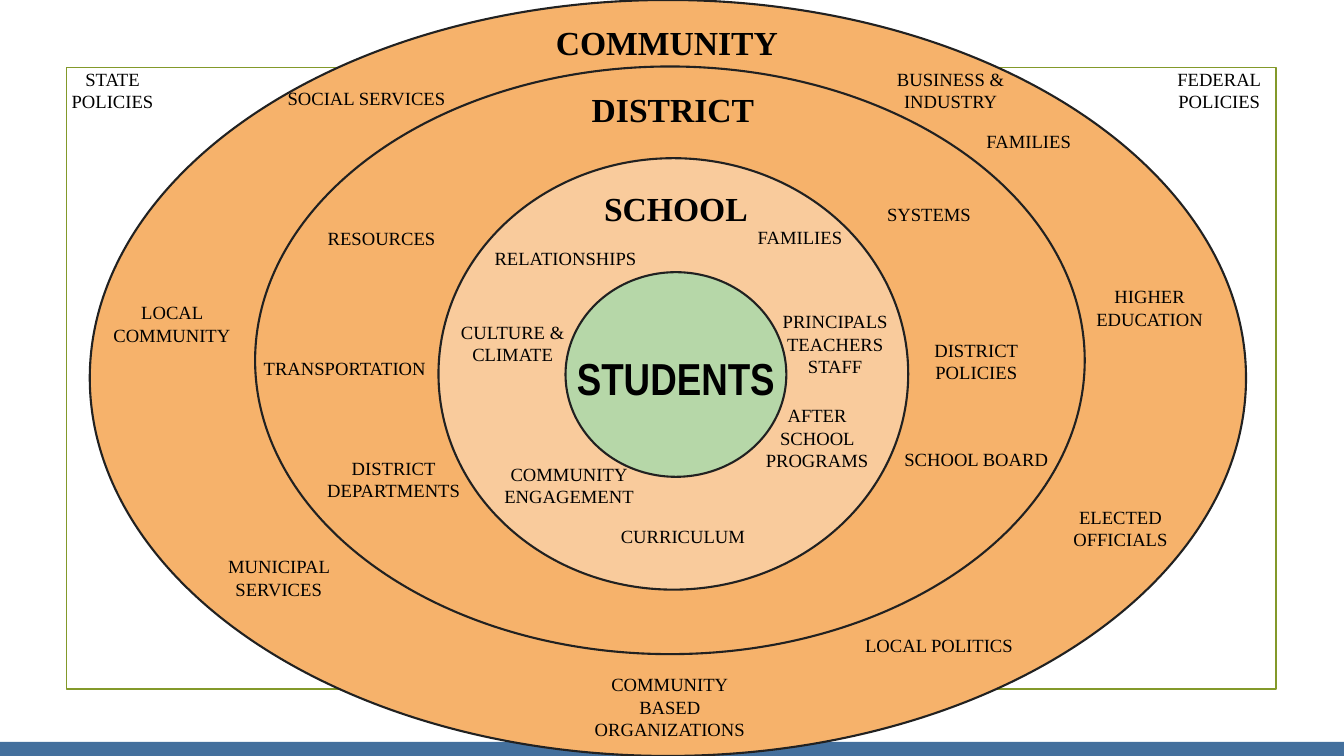
from pptx import Presentation
from pptx import util as u
from pptx.dml.color import RGBColor
from pptx.enum import shapes, text

WHITE = RGBColor(0xFF, 0xFF, 0xFF)
BLACK = RGBColor(0x00, 0x00, 0x00)
OUTLINE = RGBColor(0x21, 0x21, 0x21)
OLIVE = RGBColor(0x83, 0x99, 0x2A)
BLUE = RGBColor(0x44, 0x70, 0x9D)
ORANGE = RGBColor(0xF6, 0xB2, 0x6B)
PEACH = RGBColor(0xF9, 0xCB, 0x9C)
GREEN = RGBColor(0xB6, 0xD7, 0xA8)

SLIDE_WIDTH, SLIDE_HEIGHT = u.Inches(13.333), u.Inches(7.5)
LABEL_SIZE = (15.08, 11.6)
INSET = u.Inches(0.13)

LABEL = {"name": "Times New Roman", "size": u.Pt(13.3), "bold": False}
HEADING = {"name": "Times New Roman", "size": u.Pt(24), "bold": True}
CENTRE = {"name": "Arial Narrow", "size": u.Pt(32), "bold": True}

FILLED_RINGS = [
    ((6.68, 0, 86.03, 100), ORANGE),
    ((32.63, 20.93, 34.95, 57.07), PEACH),
    ((42.08, 36, 16.43, 27.07), GREEN),
]
DISTRICT_RING = (18.98, 8.8, 61.73, 77.73)

SCHOOL_LABELS = [
    ("CURRICULUM", 44.33, 68, 12.98, 6),
    ("COMMUNITY\nENGAGEMENT", 35.33, 59.47, 14.03, 11.2),
    ("RELATIONSHIPS", 34.88, 31.2, 14.4, 6),
    ("AFTER SCHOOL PROGRAMS", 55.13, 51.73, 11.33, 6),
    ("CULTURE & CLIMATE", 32.48, 40.67, 11.33, 9.73),
    ("FAMILIES", 51.98, 28.4),
    ("PRINCIPALS\nTEACHERS\nSTAFF", 54.6, 39.33),
]
DISTRICT_LABELS = [
    ("DISTRICT\nPOLICIES", 65.1, 43.07),
    ("TRANSPORTATION", 17.85, 45.73, 15.6, 11.6),
    ("SCHOOL BOARD", 65.1, 57.73),
    ("RESOURCES", 20.85, 28.53),
    ("SYSTEMS", 61.58, 25.33),
    ("DISTRICT\nDEPARTMENTS", 21.75, 58.67),
]
COMMUNITY_LABELS = [
    ("BUSINESS &\nINDUSTRY", 54.08, 7.2, 33.3, 7.47),
    ("COMMUNITY\nBASED\nORGANIZATIONS", 42.3, 87.33),
    ("LOCAL COMMUNITY", 5.25, 38.13),
    ("HIGHER EDUCATION", 78, 36),
    ("LOCAL POLITICS", 62.33, 82.4),
    ("SOCIAL SERVICES", 19.73, 10),
    ("FAMILIES", 69, 15.73),
    ("MUNICIPAL SERVICES", 13.2, 71.73),
    ("ELECTED OFFICIALS", 75.83, 65.2),
]
OUTER_LABELS = [
    ("FEDERAL\nPOLICIES", 83.18, 7.2),
    ("STATE\nPOLICIES", 0.83, 7.2),
]
HEADINGS = [
    ("DISTRICT", 42.53, 10),
    ("SCHOOL", 42.75, 23.07),
    ("COMMUNITY", 39.45, 1.2, 20.33, 9.07),
]


def place(left, top, width, height):
    return (
        int(SLIDE_WIDTH * left / 100),
        int(SLIDE_HEIGHT * top / 100),
        int(SLIDE_WIDTH * width / 100),
        int(SLIDE_HEIGHT * height / 100),
    )


def add_figure(slide, kind, box, fill=None, line=None, weight=1.5):
    shape = slide.shapes.add_shape(kind, *place(*box))
    shape.shadow.inherit = False
    if fill is None:
        shape.fill.background()
    else:
        shape.fill.solid()
        shape.fill.fore_color.rgb = fill
    if line is None:
        shape.line.fill.background()
    else:
        shape.line.color.rgb = line
        shape.line.width = u.Pt(weight)


def add_label(slide, wording, left, top, *size, style=LABEL, anchor=text.MSO_ANCHOR.TOP):
    box = place(left, top, *(size or LABEL_SIZE))
    frame = slide.shapes.add_textbox(*box).text_frame
    frame_format = {
        "word_wrap": True,
        "vertical_anchor": anchor,
        **{f"margin_{side}": INSET for side in ("left", "top", "right", "bottom")},
    }
    for attribute, value in frame_format.items():
        setattr(frame, attribute, value)
    frame.text = wording
    for paragraph in frame.paragraphs:
        paragraph.alignment = text.PP_ALIGN.CENTER
        for run in paragraph.runs:
            for attribute, value in style.items():
                setattr(run.font, attribute, value)
            run.font.color.rgb = BLACK


def main():
    presentation = Presentation()
    presentation.slide_width, presentation.slide_height = SLIDE_WIDTH, SLIDE_HEIGHT
    slide = presentation.slides.add_slide(presentation.slide_layouts[6])
    slide.background.fill.solid()
    slide.background.fill.fore_color.rgb = WHITE

    rectangle, oval = shapes.MSO_SHAPE.RECTANGLE, shapes.MSO_SHAPE.OVAL
    add_figure(slide, rectangle, (4.95, 8.93, 90, 82.27), line=OLIVE, weight=1.25)
    add_figure(slide, rectangle, (0, 98.13, 100, 1.87), fill=BLUE)
    for box, fill in FILLED_RINGS:
        add_figure(slide, oval, box, fill, OUTLINE)

    add_label(slide, "STUDENTS", 41.63, 42.93, 17.33, 14,
              style=CENTRE, anchor=text.MSO_ANCHOR.MIDDLE)
    for label in SCHOOL_LABELS + DISTRICT_LABELS + COMMUNITY_LABELS + OUTER_LABELS:
        add_label(slide, *label)
    for heading in HEADINGS:
        add_label(slide, *heading, style=HEADING)
    add_figure(slide, oval, DISTRICT_RING, line=OUTLINE)

    presentation.save("out.pptx")


if __name__ == "__main__":
    main()
